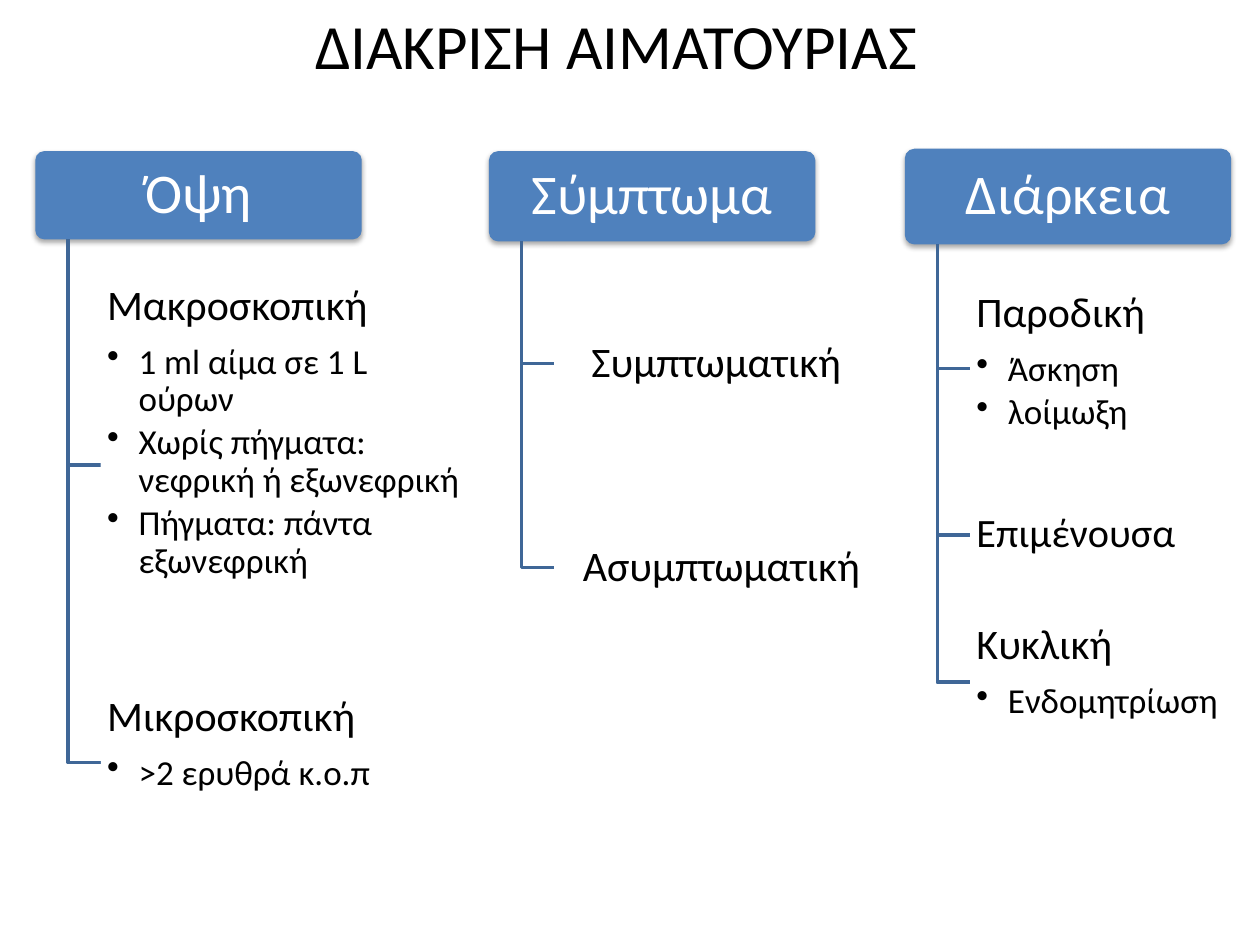
from lxml import etree
from pptx import Presentation
from pptx.dml.color import RGBColor
from pptx.enum.shapes import MSO_SHAPE
from pptx.enum.text import MSO_ANCHOR, MSO_AUTO_SIZE, PP_ALIGN
from pptx.oxml.ns import qn
from pptx.util import Pt

ROUND = MSO_SHAPE.ROUNDED_RECTANGLE
MIDDLE, TOP = MSO_ANCHOR.MIDDLE, MSO_ANCHOR.TOP
LEFT, CENTER = PP_ALIGN.LEFT, PP_ALIGN.CENTER
COLORS = {"header": "4F81BD", "line": "3F6797", "panel": "FFFFFF",
          "header_text": "FFFFFF", "text": "000000", "shadow": "000000"}
STEM, BRANCH = 18.7, 37.4

columns = [
    ("Όψη", 20.2, 86.4, 50.4, LEFT, [
        ("Μακροσκοπική", 24, 159.8, 213.1, 211.7,
         ["1 ml αίμα σε 1 L ούρων", "Χωρίς πήγματα: νεφρική ή εξωνεφρική",
          "Πήγματα: πάντα εξωνεφρική"]),
        ("Μικροσκοπική", 24, 394.6, 180.7, 82.1, [">2 ερυθρά κ.ο.π"]),
    ]),
    ("Σύμπτωμα", 279.4, 86.4, 51.5, CENTER, [
        ("Συμπτωματική", 24, 161.3, 185, 92.9, []),
        ("Ασυμπτωματική", 24, 277.9, 190.8, 92.9, []),
    ]),
    ("Διάρκεια", 517, 85, 54.7, LEFT, [
        ("Παροδική", 24, 164.2, 149, 92.9, ["Άσκηση", "λοίμωξη"]),
        ("Επιμένουσα", 23, 280.8, 126.7, 49.7, []),
        ("Κυκλική", 24, 353.5, 165.6, 72.7, ["Ενδομητρίωση"]),
    ]),
]


def add_box(x, y, w, h, color):
    sp = s.shapes.add_shape(ROUND, Pt(x), Pt(y), Pt(w), Pt(h))
    sp.adjustments[0] = 0.1
    sp.shadow.inherit = False
    sp.fill.solid()
    sp.fill.fore_color.rgb = RGBColor.from_string(COLORS[color])
    sp.line.fill.background()
    return sp


def style(p, size, color, align, after):
    p.alignment = align
    p.line_spacing = 0.9
    p.space_after = Pt(after)
    f = p.runs[0].font
    f.name, f.size = "Calibri", Pt(size)
    f.color.rgb = RGBColor.from_string(COLORS[color])


prs = Presentation()
prs.slide_width, prs.slide_height = Pt(720), Pt(540)
s = prs.slides.add_slide(prs.slide_layouts[5])

title = s.shapes.title
title.left, title.top, title.width, title.height = Pt(172.8), Pt(0), Pt(362.9), Pt(51.1)
tf = title.text_frame
tf.text = "ΔΙΑΚΡΙΣΗ ΑΙΜΑΤΟΥΡΙΑΣ"
tf.word_wrap = False
tf.auto_size = MSO_AUTO_SIZE.SHAPE_TO_FIT_TEXT
tf.vertical_anchor = TOP
p = tf.paragraphs[0]
p.alignment = LEFT
f = p.runs[0].font
f.name, f.size = "Calibri", Pt(36)
f.color.rgb = RGBColor.from_string(COLORS["text"])

for header, x, y, h, align, panels in columns:
    sp = add_box(x, y, 186.5, h, "header")
    effects = sp._element.spPr.find(qn("a:effectLst"))
    shadow = etree.SubElement(effects, qn("a:outerShdw"), blurRad=str(Pt(3.1)),
                              dist=str(Pt(1.8)), dir="5400000", rotWithShape="0")
    color = etree.SubElement(shadow, qn("a:srgbClr"), val=COLORS["shadow"])
    etree.SubElement(color, qn("a:alpha"), val="35000")
    tf = sp.text_frame
    tf.text = header
    tf.vertical_anchor = MIDDLE
    tf.margin_left = tf.margin_right = Pt(5)
    tf.margin_top = tf.margin_bottom = Pt(3)
    style(tf.paragraphs[0], 32, "header_text", CENTER, 11.2)

    for heading, size, top, width, height, bullets in panels:
        middle = top + height / 2
        path = s.shapes.build_freeform(Pt(x + STEM), Pt(y + h))
        path.add_line_segments([(Pt(x + STEM), Pt(middle)),
                                (Pt(x + BRANCH), Pt(middle))], close=False)
        sp = path.convert_to_shape()
        sp.shadow.inherit = False
        sp.fill.background()
        sp.line.color.rgb = RGBColor.from_string(COLORS["line"])
        sp.line.width = Pt(2)

        sp = add_box(x + BRANCH, top, width, height, "panel")
        color = sp._element.spPr.find(qn("a:solidFill"))[0]
        etree.SubElement(color, qn("a:alpha"), val="90000")

        tb = s.shapes.add_textbox(Pt(x + BRANCH), Pt(top), Pt(width), Pt(height))
        tf = tb.text_frame
        tf.word_wrap = True
        tf.vertical_anchor = TOP if bullets else MIDDLE
        tf.margin_left = tf.margin_right = Pt(3.6)
        tf.margin_top = tf.margin_bottom = Pt(2.4)
        tf.text = heading
        style(tf.paragraphs[0], size, "text", align, 8.4)
        for bullet in bullets:
            p = tf.add_paragraph()
            p.text = bullet
            p.level = 1
            style(p, 20, "text", align, 3)
            pPr = p._p.get_or_add_pPr()
            pPr.set("marL", str(Pt(18)))
            pPr.set("indent", str(-Pt(18)))
            etree.SubElement(pPr, qn("a:buChar"), char="•")

prs.save("out.pptx")
